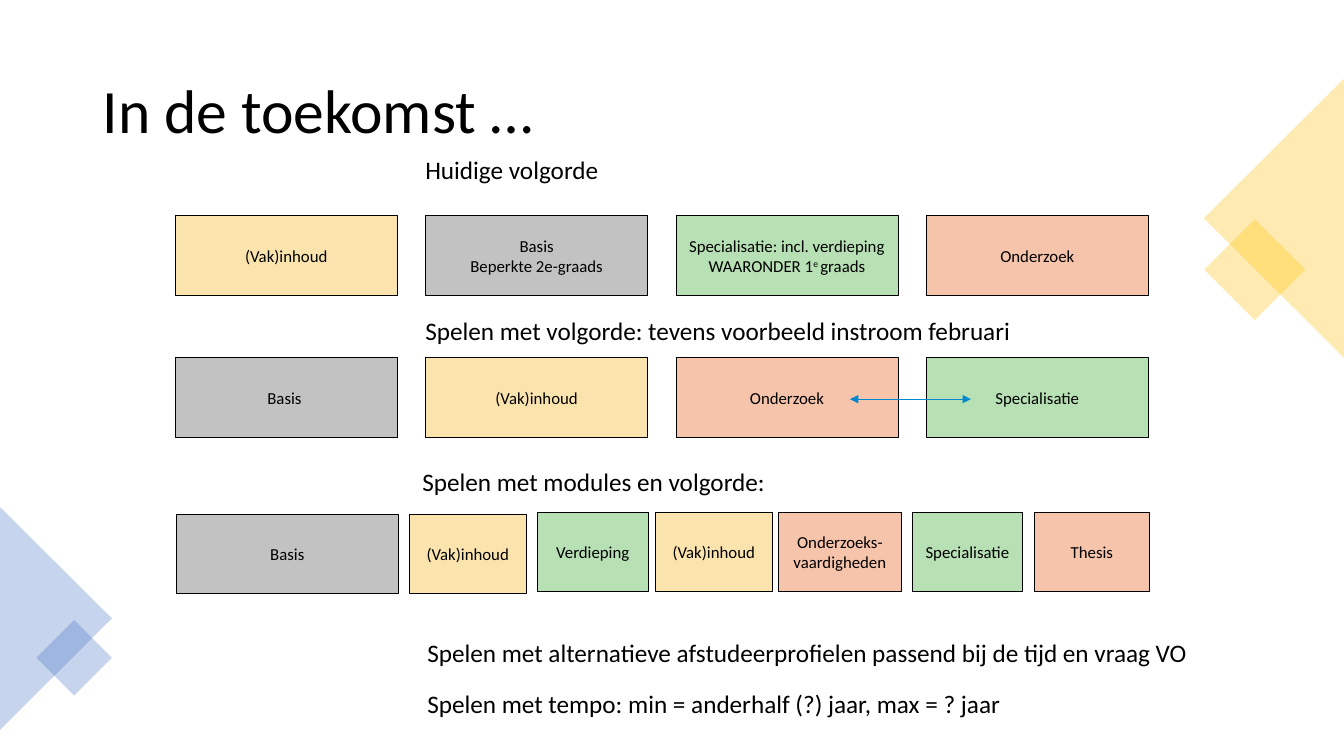
from dataclasses import dataclass

from lxml.etree import SubElement
from pptx import Presentation
from pptx.dml.color import RGBColor
from pptx.enum.shapes import MSO_CONNECTOR, MSO_SHAPE
from pptx.enum.text import MSO_ANCHOR, MSO_AUTO_SIZE, PP_ALIGN
from pptx.oxml.ns import qn
from pptx.util import Inches, Length, Pt

FONT = "Calibri"
BLACK, BLUE = "000000", "0089CF"
SAND, GREY, GREEN, PEACH = "FAE3AC", "C2C2C2", "B7E0B4", "F6C3AB"
GOLD, NAVY = "FFC000", "4472C4"
LEFT, STEP, WIDE, HIGH = 17.4, 24.83, 22, 7.9


@dataclass
class Deco:
    kind: MSO_SHAPE
    col: float
    row: float
    wide: float
    high: float
    turn: int
    tint: str


@dataclass
class Box:
    text: str
    tint: str
    col: float
    row: float
    wide: float = WIDE


@dataclass
class Label:
    text: str
    col: float
    row: float
    wide: float


DECOS = [
    Deco(MSO_SHAPE.RECTANGLE, 120.9, 23.2, 7.1, 7.1, 45, GOLD),
    Deco(MSO_SHAPE.ISOSCELES_TRIANGLE, 112.5, 14.7, 27.7, 13.9, 270, GOLD),
    Deco(MSO_SHAPE.ISOSCELES_TRIANGLE, -5.5, 55.8, 22.1, 11.1, 90, NAVY),
    Deco(MSO_SHAPE.RECTANGLE, 4.7, 62.6, 5.3, 5.3, 45, NAVY),
]
ROWS = {
    21.4: [
        ("(Vak)inhoud", SAND),
        ("Basis\nBeperkte 2e-graads", GREY),
        ("Specialisatie: incl. verdieping\nWAARONDER 1^e ^graads", GREEN),
        ("Onderzoek", PEACH),
    ],
    35.5: [
        ("Basis ", GREY),
        ("(Vak)inhoud", SAND),
        ("Onderzoek", PEACH),
        ("Specialisatie", GREEN),
    ],
}
PARTS = [
    Box("Basis", GREY, 17.5, 51),
    Box("(Vak)inhoud", SAND, 40.6, 51, 11.6),
    Box("Verdieping", GREEN, 53.3, 50.8, 11),
    Box("(Vak)inhoud", SAND, 65, 50.8, 11.6),
    Box("Onderzoeks-vaardigheden", PEACH, 77.2, 50.8, 12.2),
    Box("Specialisatie", GREEN, 90.5, 50.8, 10.9),
    Box("Thesis", PEACH, 102.6, 50.8, 11.4),
]
LABELS = [
    Label("Huidige volgorde", 41.2, 14.8, 26.6),
    Label("Spelen met volgorde: tevens voorbeeld instroom februari", 41.2, 30.8, 71.3),
    Label("Spelen met modules en volgorde:", 40.9, 45.8, 43.9),
    Label("Spelen met alternatieve afstudeerprofielen passend bij de tijd en vraag VO", 41.4, 62.7, 82.8),
    Label("Spelen met tempo: min = anderhalf (?) jaar, max = ? jaar", 41.4, 67.8, 60.4),
]


def grid(*cells: float) -> list[Length]:
    return [Inches(cell / 10) for cell in cells]


def paint(form, tint: str) -> None:
    form.solid()
    form.fore_color.rgb = RGBColor.from_string(tint)


def style(frame, size: int) -> None:
    for para in frame.paragraphs:
        for run in para.runs:
            run.font.name = FONT
            run.font.size = Pt(size)
            paint(run.font.fill, BLACK)


def add_deco(slide, deco: Deco) -> None:
    shape = slide.shapes.add_shape(deco.kind, *grid(deco.col, deco.row, deco.wide, deco.high))
    shape.rotation = deco.turn
    shape.shadow.inherit = False
    paint(shape.fill, deco.tint)
    shape.line.fill.background()
    tone = shape.element.spPr.find(".//" + qn("a:srgbClr"))
    SubElement(tone, qn("a:alpha"), val="30000")


def add_box(slide, box: Box) -> None:
    shape = slide.shapes.add_shape(MSO_SHAPE.RECTANGLE, *grid(box.col, box.row, box.wide, HIGH))
    shape.shadow.inherit = False
    paint(shape.fill, box.tint)
    paint(shape.line.fill, BLACK)
    shape.line.width = Pt(0.5)
    frame = shape.text_frame
    frame.word_wrap = True
    frame.vertical_anchor = MSO_ANCHOR.MIDDLE
    frame.margin_left = frame.margin_right = Inches(0.04)
    frame.text = box.text
    for para in frame.paragraphs:
        para.alignment = PP_ALIGN.CENTER
        first, *rest = para.text.split("^")
        para.text = first
        for spot, piece in enumerate(rest):
            run = para.add_run()
            run.text = piece
            if spot % 2 == 0:
                run.font._element.set("baseline", "30000")
    style(frame, 12)


def add_label(slide, label: Label) -> None:
    frame = slide.shapes.add_textbox(*grid(label.col, label.row, label.wide, 4)).text_frame
    frame.word_wrap = True
    frame.auto_size = MSO_AUTO_SIZE.SHAPE_TO_FIT_TEXT
    frame.text = label.text
    style(frame, 18)


def add_arrow(slide) -> None:
    arrow = slide.shapes.add_connector(MSO_CONNECTOR.STRAIGHT, *grid(84.3, 39.6, 96.3, 39.6))
    paint(arrow.line.fill, BLUE)
    arrow.line.width = Pt(0.5)
    line = arrow.line._get_or_add_ln()
    for end in ("a:headEnd", "a:tailEnd"):
        SubElement(line, qn(end), type="triangle")
    SubElement(arrow.element.spPr, qn("a:effectLst"))


def add_title(slide) -> None:
    title = slide.shapes.title
    title.left, title.top, title.width, title.height = grid(9.2, 4, 115, 14.5)
    frame = title.text_frame
    frame.text = "In de toekomst …"
    frame.vertical_anchor = MSO_ANCHOR.MIDDLE
    frame.paragraphs[0].alignment = PP_ALIGN.LEFT
    frame.paragraphs[0].line_spacing = 0.9
    style(frame, 44)


def main() -> None:
    deck = Presentation()
    deck.slide_width, deck.slide_height = Inches(13.33), Inches(7.5)
    slide = deck.slides.add_slide(deck.slide_layouts[5])
    add_title(slide)
    for deco in DECOS:
        add_deco(slide, deco)
    for row, cells in ROWS.items():
        for spot, (text, tint) in enumerate(cells):
            add_box(slide, Box(text, tint, LEFT + spot * STEP, row))
    for part in PARTS:
        add_box(slide, part)
    for label in LABELS:
        add_label(slide, label)
    add_arrow(slide)
    deck.save("out.pptx")


if __name__ == "__main__":
    main()
